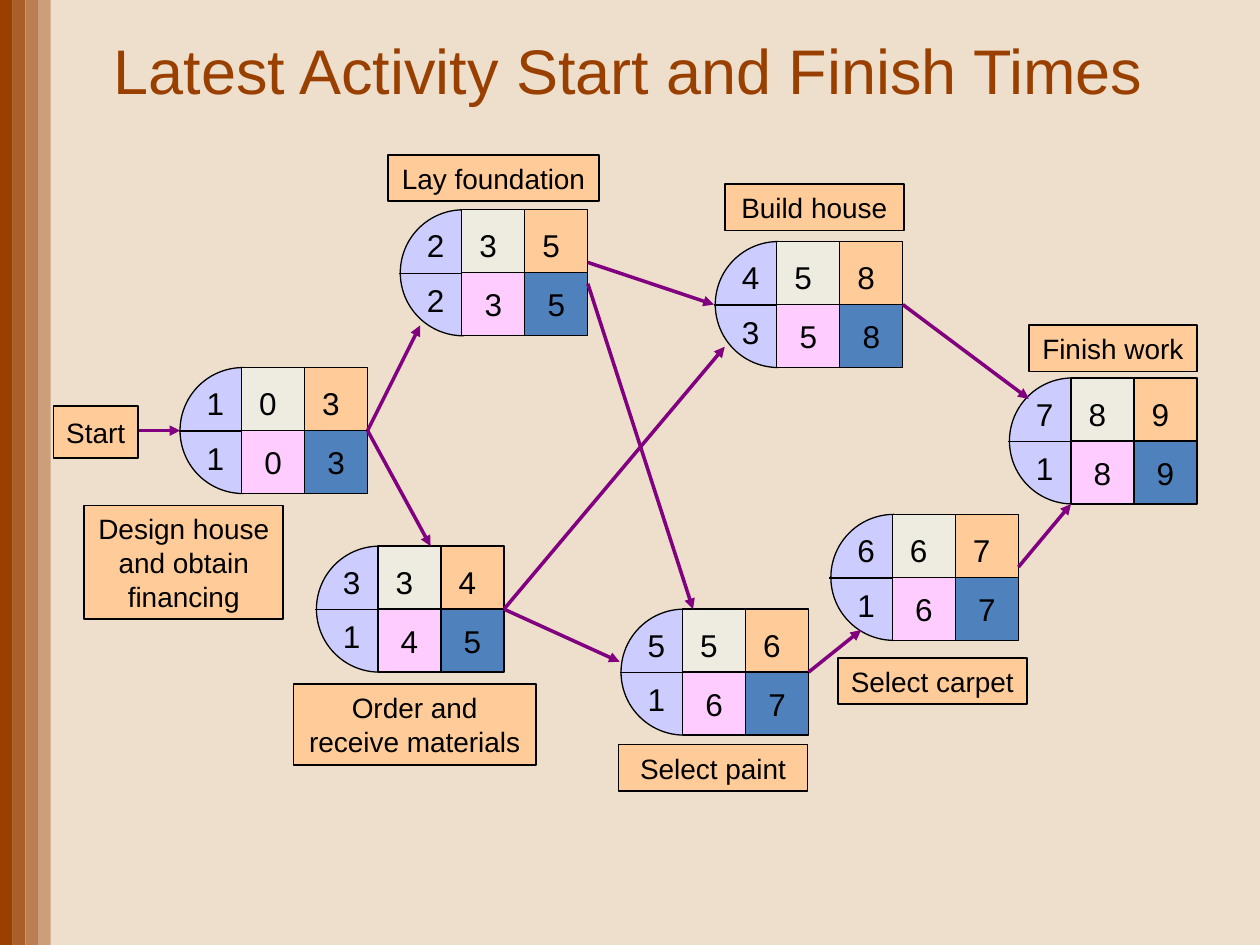
import pptx
import pptx.dml.color
import pptx.enum.shapes
import pptx.enum.text
import pptx.oxml
import pptx.oxml.ns
import pptx.util
from pptx.util import Cm

SHAPE = pptx.enum.shapes.MSO_SHAPE
ANCHOR = pptx.enum.text.MSO_ANCHOR
CELL = 1.27

# left and top of the time grid, activity, duration, ES, EF, LS, LF
ACTIVITIES = [
    (4.87, 7.41, "1", "1", "0", "3", "0", "3"),
    (9.31, 4.23, "2", "2", "3", "5", "3", "5"),
    (7.62, 11.01, "3", "1", "3", "4", "4", "5"),
    (13.76, 12.28, "5", "1", "5", "6", "6", "7"),
    (15.66, 4.87, "4", "3", "5", "8", "5", "8"),
    (17.99, 10.37, "6", "1", "6", "7", "6", "7"),
    (21.59, 7.62, "7", "1", "8", "9", "8", "9"),
]
ARROWS = [
    (2.79, 8.68, 3.63, 8.68),
    (7.41, 8.68, 8.68, 11.01),
    (7.41, 8.68, 8.47, 6.56),
    (11.85, 5.29, 14.39, 6.14),
    (11.85, 5.72, 13.97, 12.28),
    (10.16, 12.28, 14.61, 6.99),
    (10.16, 12.28, 12.49, 13.34),
    (16.3, 13.55, 17.36, 12.7),
    (18.2, 6.14, 20.74, 8.04),
    (20.53, 11.43, 21.59, 10.16),
]
LABELS = [
    ("Start", 1.08, 8.18, 1.7, 1.06),
    ("Design house and obtain financing", 1.7, 10.19, 4.01, 2.29),
    ("Select paint", 12.47, 15.01, 3.81, 0.94),
    ("Lay foundation", 7.83, 3.12, 4.24, 0.94),
    ("Select carpet", 16.89, 13.26, 3.81, 0.94),
    ("Build house", 14.61, 3.71, 3.61, 0.94),
    ("Finish work", 20.74, 6.55, 3.39, 0.94),
    ("Order and\vreceive materials", 5.92, 13.79, 4.88, 1.63),
]


def rgb(value):
    return pptx.dml.color.RGBColor.from_string(value)


def add_xml(parent, tag, **attributes):
    child = pptx.oxml.parse_xml(f"<a:{tag} {pptx.oxml.ns.nsdecls('a')}/>")
    for name, value in attributes.items():
        child.set(name, value)
    parent.append(child)


class NetworkSlide:
    font = "Arial"
    black = "000000"
    brown = "994000"
    orange = "FFCC99"
    purple = "800080"

    def __init__(self, prs):
        self.s = prs.slides.add_slide(prs.slide_layouts[5])
        self.s.background.fill.solid()
        self.s.background.fill.fore_color.rgb = rgb("EEDFCC")

    def set_text(self, sp, text, size, color=black, anchor=ANCHOR.MIDDLE, wrap=True):
        tf = sp.text_frame
        tf.text = text
        tf.word_wrap = wrap
        tf.vertical_anchor = anchor
        p = tf.paragraphs[0]
        p.alignment = pptx.enum.text.PP_ALIGN.CENTER
        for r in p.runs:
            r.font.name = self.font
            r.font.size = pptx.util.Pt(size)
            r.font.color.rgb = rgb(color)

    def title(self, text, left, top, width, height):
        sp = self.s.shapes.title
        sp.left, sp.top, sp.width, sp.height = map(Cm, (left, top, width, height))
        self.set_text(sp, text, 36, self.brown)

    def shape(self, kind, left, top, width, height, fill, line=0.75):
        sp = self.s.shapes.add_shape(kind, *map(Cm, (left, top, width, height)))
        sp.shadow.inherit = False
        sp.fill.solid()
        sp.fill.fore_color.rgb = rgb(fill)
        if line:
            sp.line.color.rgb = rgb(self.black)
            sp.line.width = pptx.util.Pt(line)
        else:
            sp.line.fill.background()
        return sp

    def side_bars(self):
        """Four bars on the left edge, each paler than the one before."""
        width = 1.02 / 4
        for i, opacity in enumerate((100, 80, 60, 40)):
            sp = self.shape(SHAPE.RECTANGLE, i * width, 0, width, 19.05, self.brown, 0)
            if opacity < 100:
                color = sp._element.spPr.find(".//" + pptx.oxml.ns.qn("a:srgbClr"))
                add_xml(color, "alpha", val=str(opacity * 1000))

    def line(self, x1, y1, x2, y2, color=black, width=0.75, arrow=False):
        c = self.s.shapes.add_connector(
            pptx.enum.shapes.MSO_CONNECTOR.STRAIGHT, *map(Cm, (x1, y1, x2, y2)))
        c.line.color.rgb = rgb(color)
        c.line.width = pptx.util.Pt(width)
        if arrow:
            ln = c._element.spPr.find(pptx.oxml.ns.qn("a:ln"))
            add_xml(ln, "tailEnd", type="triangle")
        add_xml(c._element.spPr, "effectLst")

    def number(self, text, left, top):
        sp = self.s.shapes.add_textbox(*map(Cm, (left, top, 1.06, 1.02)))
        self.set_text(sp, text, 18, anchor=ANCHOR.TOP)

    def activity(self, x, y, name, duration, es, ef, ls, lf):
        half = self.shape(SHAPE.CHORD, x - 1.24, y, 2 * CELL, 2 * CELL, "CCCCFF")
        # 90 and 270 degrees, in 60000ths of a degree over 100000
        half.adjustments[0], half.adjustments[1] = 54, 162
        self.line(x, y + 1.28, x - CELL, y + 1.28)
        for i, fill in enumerate(("EEECE1", self.orange)):
            self.shape(SHAPE.RECTANGLE, x + i * CELL, y, CELL, CELL, fill)
        for i, (fill, time) in enumerate((("FFCCFF", ls), ("4F81BD", lf))):
            sp = self.shape(SHAPE.RECTANGLE, x + i * CELL, y + CELL, CELL, CELL, fill)
            self.set_text(sp, time, 18, wrap=False)
        for text, dx, dy in ((name, -1.06, 0.21), (es, 0, 0.21),
                             (ef, CELL, 0.21), (duration, -1.06, 1.31)):
            self.number(text, x + dx, y + dy)

    def arrow(self, x1, y1, x2, y2):
        self.line(x1, y1, x2, y2, self.purple, 2, arrow=True)

    def label(self, text, left, top, width, height):
        sp = self.shape(SHAPE.RECTANGLE, left, top, width, height, self.orange, 1)
        self.set_text(sp, text, 16, wrap=text != "Start")


def main():
    prs = pptx.Presentation()
    prs.slide_width, prs.slide_height = Cm(25.4), Cm(19.05)
    slide = NetworkSlide(prs)
    slide.side_bars()
    slide.title("Latest Activity Start and Finish Times", 1.14, 0.23, 23.06, 2.34)
    for activity in ACTIVITIES:
        slide.activity(*activity)
    for arrow in ARROWS:
        slide.arrow(*arrow)
    for label in LABELS:
        slide.label(*label)
    prs.save("out.pptx")


if __name__ == "__main__":
    main()
